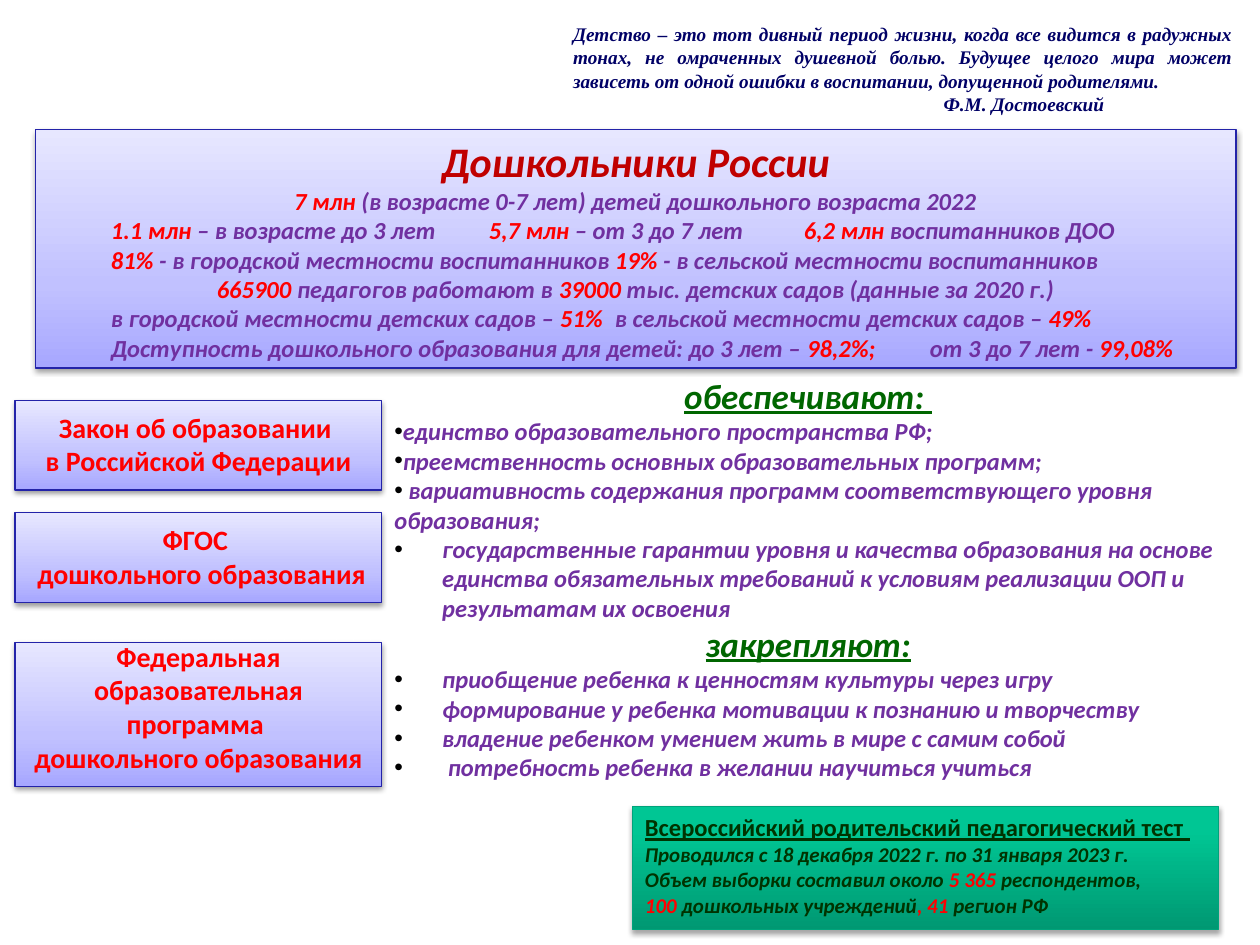
import pptx
import pptx.dml.color
import pptx.enum.text
import pptx.oxml
import pptx.oxml.ns
import pptx.util
from lxml import etree

Inches = pptx.util.Inches
Pt = pptx.util.Pt
Align = pptx.enum.text.PP_ALIGN
Anchor = pptx.enum.text.MSO_ANCHOR
qn = pptx.oxml.ns.qn

RED = "FF0000"
PURPLE = "7030A0"
DARK_GREEN = "003300"
LILAC = [(0, "A7A7FF"), (35, "C1C1FF"), (100, "E7E7FF")]
EMERALD = [(0, "009872"), (80, "00C694"), (100, "00C795")]

STATISTICS = [
    ("*7 млн *(в возрасте 0-7 лет) детей дошкольного возраста 2022", ()),
    ("\t*1.1 млн *– в возрасте до 3 лет\t*5,7 млн *– от 3 до 7 лет"
     "\t*6,2 млн* воспитанников ДОО", (0.55, 3.7, 6.26)),
    ("\t*81% *- в городской местности воспитанников"
     "\t*19% *- в сельской местности воспитанников", (0.47, 4.93)),
    ("*665900 *педагогов работают в *39000* тыс. детских садов (данные за 2020 г.)", ()),
    ("\tв городской местности детских садов – *51%*"
     "\tв сельской местности детских садов – *49%*", (0.54, 4.96)),
    ("\tДоступность дошкольного образования для детей: до 3 лет – *98,2%;*"
     "\tот 3 до 7 лет - *99,08%*", (0.55, 6.89)),
]

GOALS = [
    ("обеспечивают: ", [
        ("единство образовательного пространства РФ;", 0),
        ("преемственность основных образовательных программ;", 0),
        (" вариативность содержания программ соответствующего уровня образования;", 0),
        ("государственные гарантии уровня и качества образования на основе единства "
         "обязательных требований к условиям реализации ООП и результатам их освоения", 0.38),
    ]),
    ("закрепляют:", [
        ("приобщение ребенка к ценностям культуры через игру", 0.38),
        ("формирование у ребенка мотивации к познанию и творчеству", 0.38),
        ("владение ребенком умением жить в мире с самим собой", 0.38),
        (" потребность ребенка в желании научиться учиться", 0.38),
    ]),
]

DOCUMENTS = [
    (3.18, 0.71, ["Закон об образовании ", "в Российской Федерации"]),
    (4.07, 0.71, ["ФГОС ", " дошкольного образования"]),
    (5.1, 1.14, ["Федеральная образовательная программа ", "дошкольного образования"]),
]

SURVEY = [
    "Проводился с 18 декабря 2022 г. по 31 января 2023 г.",
    "Объем выборки составил около *5 365 *респондентов,",
    "*100 *дошкольных учреждений*, 41 *регион РФ",
]


def rgb(value):
    return pptx.dml.color.RGBColor.from_string(value)


def write(frame, text, size, color, font="Calibri", bold=True, italic=False,
          underline=False, align=Align.LEFT, margin=0, hanging=0, bullet=False, tabs=()):
    paragraph = frame.add_paragraph() if frame.text else frame.paragraphs[0]
    paragraph.alignment = align
    paragraph.space_before = Pt(0)
    properties = paragraph._p.get_or_add_pPr()
    properties.set("marL", str(Inches(margin)))
    properties.set("indent", str(-Inches(hanging)))
    if bullet:
        bullet_color = etree.SubElement(properties, qn("a:buClr"))
        etree.SubElement(bullet_color, qn("a:srgbClr"), val="000000")
        etree.SubElement(properties, qn("a:buFont"), typeface="Arial")
        etree.SubElement(properties, qn("a:buChar"), char="•")
    else:
        etree.SubElement(properties, qn("a:buNone"))
    if tabs:
        tab_list = etree.SubElement(properties, qn("a:tabLst"))
        for position in tabs:
            etree.SubElement(tab_list, qn("a:tab"), pos=str(Inches(position)), algn="l")
    for index, part in enumerate(text.split("*")):
        if part:
            run = paragraph.add_run()
            run.text = part
            run.font.name = font
            run.font.size = Pt(size)
            run.font.bold = bold
            run.font.italic = italic
            run.font.underline = underline
            run.font.color.rgb = rgb(RED if index % 2 else color)


def place(shape, left, top, width, height):
    shape.left, shape.top = Inches(left), Inches(top)
    shape.width, shape.height = Inches(width), Inches(height)


def prepare_frame(shape, anchor, bottom=0.05):
    frame = shape.text_frame
    frame.word_wrap = True
    frame.auto_size = pptx.enum.text.MSO_AUTO_SIZE.NONE
    frame.vertical_anchor = anchor
    frame.margin_left = frame.margin_right = Inches(0.1)
    frame.margin_top, frame.margin_bottom = Inches(0.05), Inches(bottom)
    return frame


def decorate(shape, stops, line, opacity=38, distance=1.6):
    shape.fill.gradient()
    shape.fill.gradient_angle = 90
    properties = shape._element.spPr
    stop_list = properties.find(".//" + qn("a:gsLst"))
    for stop in list(stop_list):
        stop_list.remove(stop)
    for position, color in stops:
        stop = etree.SubElement(stop_list, qn("a:gs"), pos=str(position * 1000))
        etree.SubElement(stop, qn("a:srgbClr"), val=color)
    shape.line.color.rgb = rgb(line)
    shape.line.width = Pt(0.75)
    shape.shadow.inherit = False
    shadow = etree.SubElement(
        properties.find(qn("a:effectLst")), qn("a:outerShdw"), blurRad=str(Pt(3.1)),
        dist=str(Pt(distance)), dir="5400000", rotWithShape="0")
    shadow_color = etree.SubElement(shadow, qn("a:srgbClr"), val="000000")
    etree.SubElement(shadow_color, qn("a:alpha"), val=str(opacity * 1000))


def add_panel(slide, left, top, width, height, stops, line, **shadow):
    panel = slide.shapes.add_shape(
        pptx.enum.shapes.MSO_SHAPE.RECTANGLE,
        Inches(left), Inches(top), Inches(width), Inches(height))
    decorate(panel, stops, line, **shadow)
    return prepare_frame(panel, Anchor.BOTTOM, bottom=0.1)


def fill_statistics(statistics):
    place(statistics, 0.28, 1.03, 9.53, 1.89)
    decorate(statistics, LILAC, "2323A9")
    frame = prepare_frame(statistics, Anchor.MIDDLE)
    write(frame, "Дошкольники России", 24, "C00000", italic=True, align=Align.CENTER)
    for text, tabs in STATISTICS:
        write(frame, text, 14, PURPLE, italic=True, tabs=tabs,
              align=Align.LEFT if tabs else Align.CENTER)


def fill_goals(goals):
    place(goals, 3.03, 2.92, 6.77, 3.47)
    frame = prepare_frame(goals, Anchor.TOP)
    for heading, items in GOALS:
        write(frame, heading, 20, "006600", italic=True, underline=True, align=Align.CENTER)
        for text, indent in items:
            write(frame, text, 14, PURPLE, italic=True, bullet=True,
                  margin=indent, hanging=indent)


def add_epigraph(slide):
    epigraph = slide.shapes.add_textbox(Inches(4.45), Inches(0.13), Inches(5.43), Inches(0.84))
    frame = prepare_frame(epigraph, Anchor.TOP)
    style = dict(size=11, color="000066", font="Times New Roman", italic=True)
    write(frame, "Детство – это тот дивный период жизни, когда все видится в радужных тонах, "
          "не омраченных душевной болью. Будущее целого мира может зависеть от одной ошибки "
          "в воспитании, допущенной родителями.", align=Align.JUSTIFY, **style)
    write(frame, "Ф.М. Достоевский", margin=2.94, **style)


def add_documents(slide):
    for top, height, lines in DOCUMENTS:
        frame = add_panel(slide, 0.12, top, 2.91, height, LILAC, "2323A9")
        for text in lines:
            write(frame, text, 16, RED, align=Align.CENTER)


def add_survey(slide):
    frame = add_panel(slide, 5.02, 6.4, 4.65, 0.98, EMERALD, "00A37B", opacity=35, distance=1.8)
    write(frame, "Всероссийский родительский педагогический тест ", 14, DARK_GREEN, underline=True)
    for text in SURVEY:
        write(frame, text, 12, DARK_GREEN, italic=True)


def main():
    presentation = pptx.Presentation()
    presentation.slide_width, presentation.slide_height = Inches(10), Inches(7.5)
    slide = presentation.slides.add_slide(presentation.slide_layouts[1])
    fill_statistics(slide.shapes.title)
    fill_goals(slide.placeholders[1])
    add_epigraph(slide)
    add_documents(slide)
    add_survey(slide)
    presentation.save("out.pptx")


if __name__ == "__main__":
    main()
